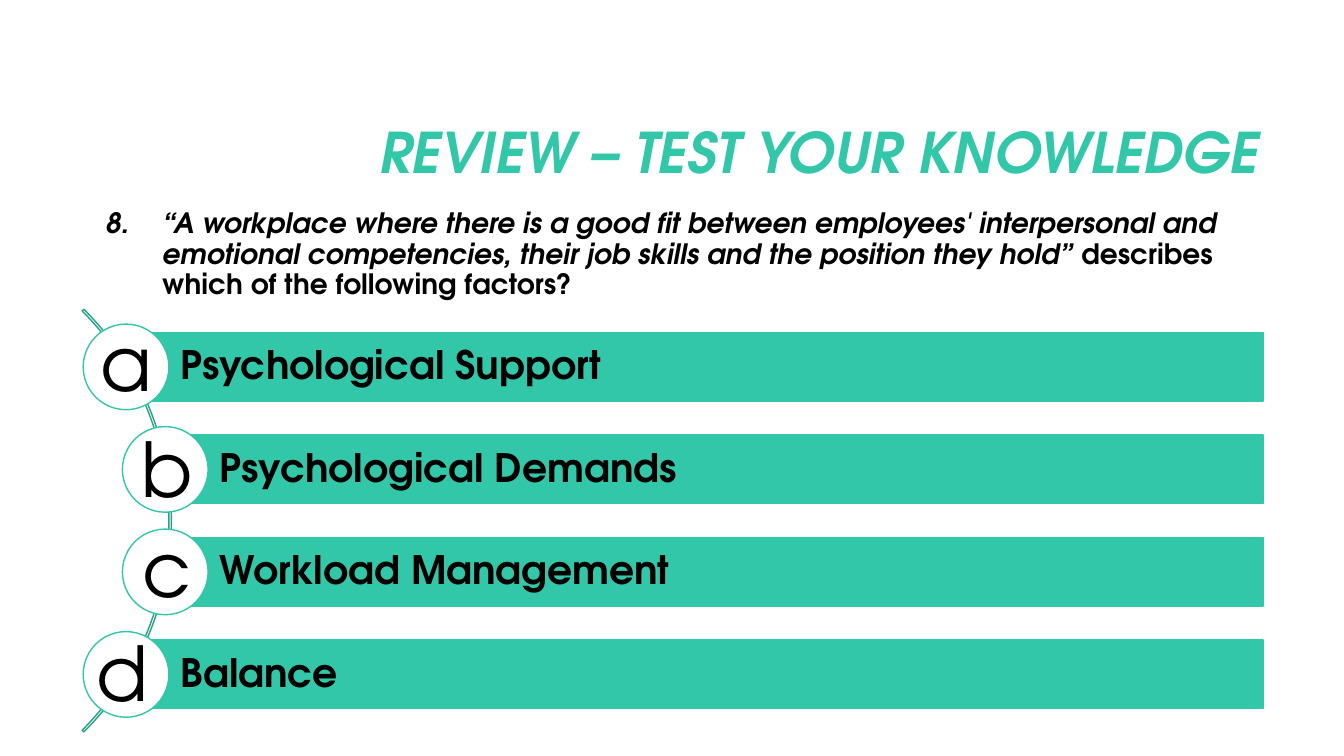
import pptx
import pptx.util
import pptx.dml.color
import pptx.enum.shapes
import pptx.enum.text
import pptx.oxml

RGBColor = pptx.dml.color.RGBColor
TEAL = RGBColor(0x32, 0xC7, 0xA9)
DARK_TEAL = RGBColor(0x28, 0x9F, 0x87)
BLACK = RGBColor(0, 0, 0)
WHITE = RGBColor(255, 255, 255)

SHAPE = pptx.enum.shapes.MSO_SHAPE
ALIGN = pptx.enum.text.PP_ALIGN
ANCHOR = pptx.enum.text.MSO_ANCHOR
Pt = pptx.util.Pt
Inches = pptx.util.Inches

BAR_TOP, BAR_STEP, BAR_HEIGHT, BAR_RIGHT = 44, 13.56, 9.07, 93.98
CIRCLE_WIDTH, CIRCLE_HEIGHT = 6.38, 11.33
LETTER_WIDTH, LETTER_HEIGHT = 5.4, 13.47
OUTER, INNER = 9.38, 12.3

OPTIONS = [
    ("a", "Psychological Support", OUTER, 0, -2.93),
    ("b", "Psychological Demands", INNER, 0.15, -2.4),
    ("c", "Workload Management", INNER, 0.11, -2.8),
    ("d", "Balance", OUTER, -0.3, -2.53),
]


def add_text(p, text, size=20, color=BLACK, bold=False, italic=False,
             font="TeX Gyre Adventor", align=ALIGN.LEFT, spacing=0.9):
    p.alignment = align
    p.line_spacing = spacing
    r = p.add_run()
    r.text = text
    r.font.name = font
    r.font.size = Pt(size)
    r.font.bold = bold
    r.font.italic = italic
    r.font.color.rgb = color


class QuizSlide:
    """Draws quiz elements on a slide, placed on a grid of 100 columns by 100 rows."""

    def __init__(self, prs):
        self.slide = prs.slides.add_slide(prs.slide_layouts[6])
        self.column = prs.slide_width / 100
        self.row = prs.slide_height / 100

    def place(self, x, y, w, h):
        return (round(x * self.column), round(y * self.row),
                round(w * self.column), round(h * self.row))

    def shape(self, kind, x, y, w, h, fill=None, line=TEAL):
        sp = self.slide.shapes.add_shape(kind, *self.place(x, y, w, h))
        sp.shadow.inherit = False
        if fill is None:
            sp.fill.background()
        else:
            sp.fill.solid()
            sp.fill.fore_color.rgb = fill
        sp.line.color.rgb = line
        sp.line.width = Pt(1)
        return sp

    def text(self, x, y, w, h, anchor=ANCHOR.TOP, wrap=True):
        tf = self.slide.shapes.add_textbox(*self.place(x, y, w, h)).text_frame
        tf.word_wrap = wrap
        tf.vertical_anchor = anchor
        return tf.paragraphs[0]

    def question(self, number, quote, ending, *box):
        p = self.text(*box)
        pPr = p._p.get_or_add_pPr()
        pPr.set("marL", str(Inches(0.56)))
        pPr.set("indent", str(-Inches(0.56)))
        ns = 'xmlns:a="http://schemas.openxmlformats.org/drawingml/2006/main"'
        for tag in ('buFont {} typeface="TeX Gyre Adventor"',
                    f'buAutoNum {{}} type="arabicPeriod" startAt="{number}"'):
            pPr.append(pptx.oxml.parse_xml(f"<a:{tag.format(ns)}/>"))
        add_text(p, quote, bold=True, italic=True)
        add_text(p, ending, bold=True)

    def arc(self, *box):
        sp = self.shape(SHAPE.BLOCK_ARC, *box, line=DARK_TEAL)
        for i, value in enumerate((189, 27, 0.004)):
            sp.adjustments[i] = value

    def bar(self, label, left, top):
        sp = self.shape(SHAPE.RECTANGLE, left, top, BAR_RIGHT - left, BAR_HEIGHT, TEAL)
        tf = sp.text_frame
        tf.word_wrap = True
        tf.vertical_anchor = ANCHOR.MIDDLE
        tf.margin_left = Inches(0.54)
        tf.margin_top = tf.margin_right = tf.margin_bottom = Inches(0.08)
        add_text(tf.paragraphs[0], label, size=28, bold=True)

    def circle(self, center, middle):
        self.shape(SHAPE.OVAL, center - CIRCLE_WIDTH / 2, middle - CIRCLE_HEIGHT / 2,
                   CIRCLE_WIDTH, CIRCLE_HEIGHT, WHITE)

    def letter(self, letter, center, top):
        p = self.text(center - LETTER_WIDTH / 2, top, LETTER_WIDTH, LETTER_HEIGHT, wrap=False)
        add_text(p, letter, size=54, align=ALIGN.CENTER, spacing=1.0)


def main():
    prs = pptx.Presentation()
    prs.slide_width = Inches(13.33)
    prs.slide_height = Inches(7.5)
    quiz = QuizSlide(prs)

    title = quiz.text(23.78, 11.2, 70.65, 18.8, anchor=ANCHOR.MIDDLE)
    add_text(title, "REVIEW – TEST YOUR KNOWLEDGE", size=40, color=TEAL,
             bold=True, italic=True, align=ALIGN.RIGHT)
    quiz.question(
        8,
        "“A workplace where there is a good fit between employees' interpersonal "
        "and emotional competencies, their job skills and the position they hold” ",
        "describes which of the following factors?",
        7.13, 27.07, 87.23, 12.93)

    quiz.arc(-31.73, 29.33, 44.48, 79.07)
    for i, (letter, label, left, dx, dy) in enumerate(OPTIONS):
        top = BAR_TOP + i * BAR_STEP
        quiz.bar(label, left, top)
        quiz.circle(left, top + BAR_HEIGHT / 2)
        quiz.letter(letter, left + dx, top + dy)

    prs.save("out.pptx")


if __name__ == "__main__":
    main()
